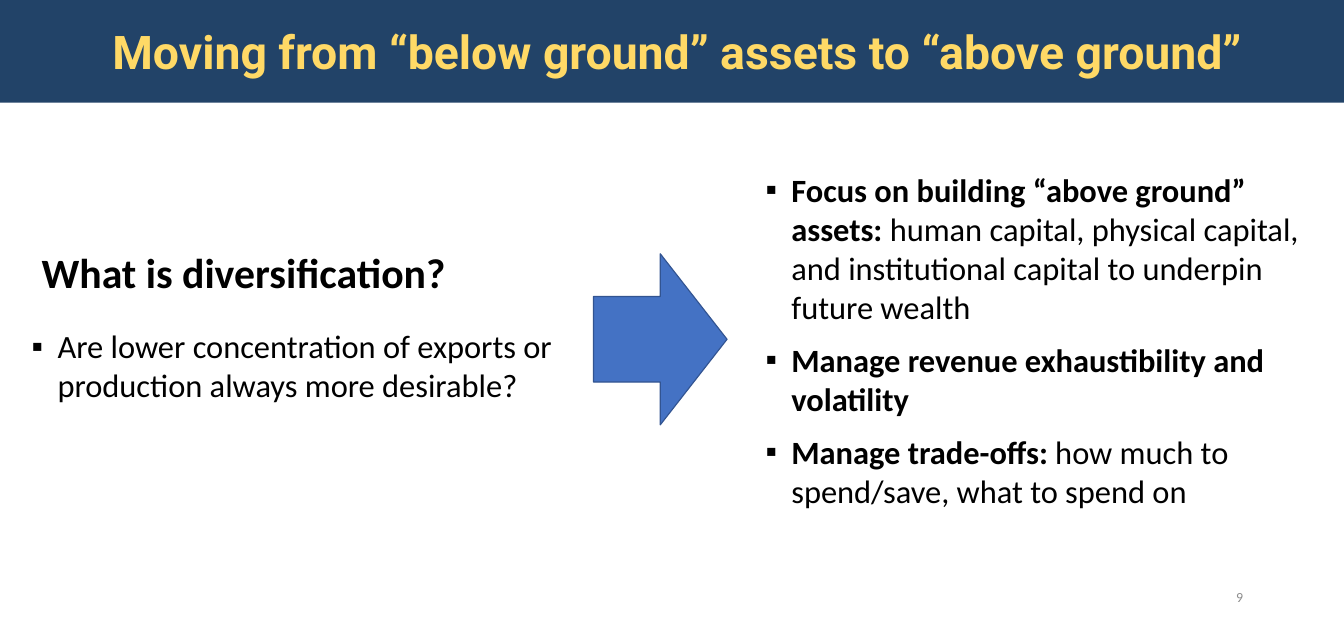
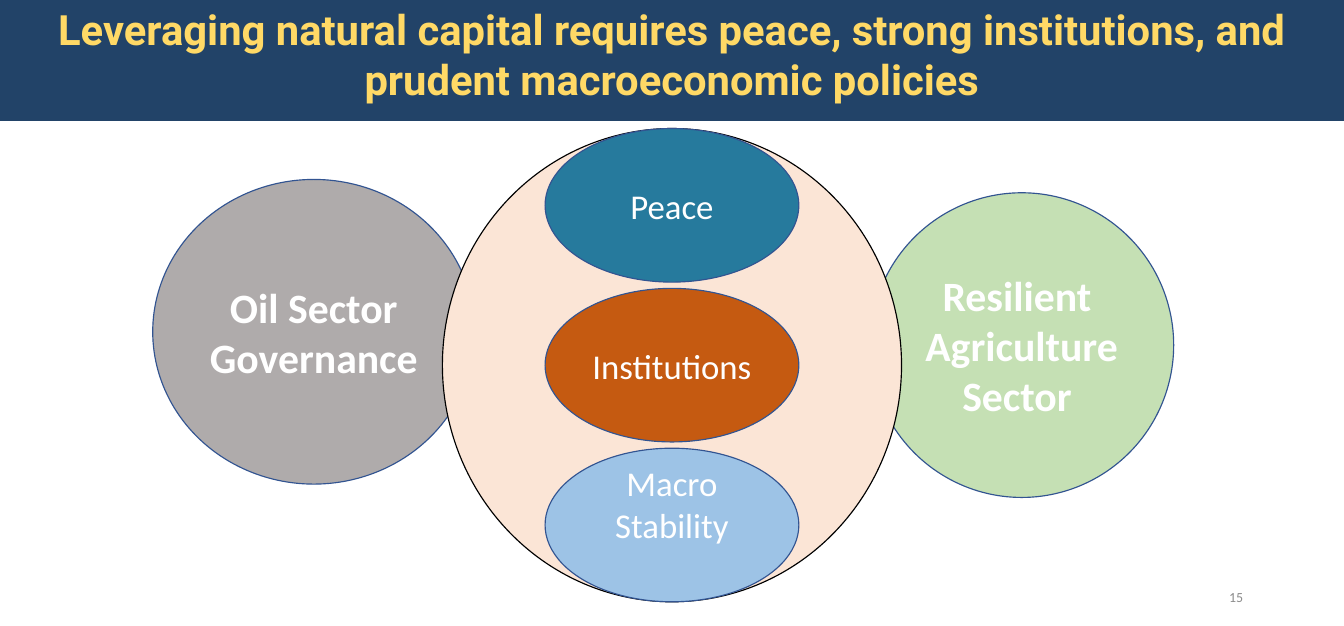
from lxml.etree import SubElement
from pptx import Presentation
from pptx.dml.color import RGBColor
from pptx.enum.shapes import MSO_SHAPE
from pptx.enum.text import MSO_ANCHOR, MSO_AUTO_SIZE, PP_ALIGN
from pptx.oxml.ns import qn
from pptx.util import Inches, Pt

WIDTH, HEIGHT = 16.1, 7.5
NAVY, GOLD, WHITE, BLACK = "224368", "FFD966", "FFFFFF", "000000"
GREY, OUTLINE, ARROW_BLUE = "8C8C8C", "325491", "4472C4"
BODY_FONT, TITLE_FONT = "Calibri", "Roboto"
TWO_CONTENT, TITLE_ONLY = 3, 5


def rgb(value):
    return RGBColor.from_string(value)


def place(shape, left, top, width, height):
    shape.left, shape.top = Inches(left), Inches(top)
    shape.width, shape.height = Inches(width), Inches(height)


def set_fill(shape, color):
    shape.fill.solid()
    shape.fill.fore_color.rgb = rgb(color)


def add_run(p, text, size, color=BLACK, bold=False, font=BODY_FONT):
    r = p.add_run()
    r.text = text
    r.font.name = font
    r.font.size = Pt(size)
    r.font.bold = bold
    r.font.color.rgb = rgb(color)


def setup_frame(shape, anchor=MSO_ANCHOR.TOP):
    tf = shape.text_frame
    tf.word_wrap = True
    tf.auto_size = MSO_AUTO_SIZE.NONE
    tf.vertical_anchor = anchor
    return tf


def next_paragraph(tf, index):
    return tf.add_paragraph() if index else tf.paragraphs[0]


def add_title(s, text, size, band_height, margin_top, margin_left=0.1):
    title = s.shapes.title
    place(title, 0, 0, WIDTH, band_height)
    set_fill(title, NAVY)
    tf = setup_frame(title)
    tf.margin_top = Inches(margin_top)
    tf.margin_left = Inches(margin_left)
    p = tf.paragraphs[0]
    p.alignment = PP_ALIGN.CENTER
    add_run(p, text, size, GOLD, True, TITLE_FONT)


def add_heading(s, text, box):
    heading = s.shapes.add_shape(MSO_SHAPE.RECTANGLE, *map(Inches, box))
    heading.shadow.inherit = False
    set_fill(heading, WHITE)
    heading.line.fill.background()
    p = setup_frame(heading).paragraphs[0]
    p.alignment = PP_ALIGN.LEFT
    add_run(p, text, 36, bold=True)


def add_page_number(s, number):
    label = s.shapes.add_textbox(*map(Inches, (11.37, 6.95, 3.62, 0.4)))
    p = setup_frame(label, MSO_ANCHOR.MIDDLE).paragraphs[0]
    p.alignment = PP_ALIGN.RIGHT
    add_run(p, number, 12, GREY)


def fill_list(body, box, items):
    place(body, *box)
    tf = setup_frame(body)
    for index, (lead, rest) in enumerate(items):
        p = next_paragraph(tf, index)
        pPr = p._p.get_or_add_pPr()
        pPr.set("marL", str(Inches(0.31)))
        pPr.set("indent", str(-Inches(0.31)))
        SubElement(pPr, qn("a:buChar")).set("char", "▪")
        p.space_before = Pt(0)
        p.space_after = Pt(12)
        for text, bold in ((lead, True), (rest, False)):
            if text:
                add_run(p, text, 28, bold=bold)


def add_figure(s, kind, box, fill, line=OUTLINE):
    shape = s.shapes.add_shape(kind, *map(Inches, box))
    shape.shadow.inherit = False
    set_fill(shape, fill)
    shape.line.color.rgb = rgb(line)
    shape.line.width = Pt(1)
    return shape


def add_ellipse(s, box, fill, lines, size, bold=False):
    shape = add_figure(s, MSO_SHAPE.OVAL, box, fill)
    tf = setup_frame(shape, MSO_ANCHOR.MIDDLE)
    for index, text in enumerate(lines):
        p = next_paragraph(tf, index)
        p.alignment = PP_ALIGN.CENTER
        add_run(p, text, size, WHITE, bold)
    return shape


def build_assets_slide(prs):
    s = prs.slides.add_slide(prs.slide_layouts[TWO_CONTENT])
    add_title(s, "Moving from “below ground” assets to “above ground”", 40, 1.23, 0.28, 0.22)
    add_heading(s, "What is diversification?", (0.4, 2.91, 7.65, 0.71))
    fill_list(s.placeholders[1], (0.28, 3.86, 7.15, 2.46), [
        ("", "Are lower concentration of exports or production always more desirable?"),
    ])
    fill_list(s.placeholders[2], (9.07, 1.99, 6.63, 4.21), [
        ("Focus on building “above ground” assets: ",
         "human capital, physical capital, and institutional capital to underpin future wealth"),
        ("Manage revenue exhaustibility and volatility", ""),
        ("Manage trade-offs: ", "how much to spend/save, what to spend on"),
    ])
    add_figure(s, MSO_SHAPE.RIGHT_ARROW, (7.11, 3.04, 1.6, 2.05), ARROW_BLUE)
    add_page_number(s, "9")


def build_capital_slide(prs):
    s = prs.slides.add_slide(prs.slide_layouts[TITLE_ONLY])
    add_title(s, "Leveraging natural capital requires peace, strong institutions, "
              "and prudent macroeconomic policies", 36, 1.45, 0.05)
    add_ellipse(s, (10.42, 2.31, 3.64, 3.65), "C5E0B4",
                ["Resilient ", "Agriculture Sector "], 36, True)
    add_ellipse(s, (1.83, 2.15, 3.86, 3.65), "AFABAB",
                ["Oil Sector Governance"], 36, True)

    top, outer_width, outer_height = 1.54, 5.5, 5.67
    inner_width, inner_height = 3.04, 1.84
    add_figure(s, MSO_SHAPE.OVAL,
               ((WIDTH - outer_width) / 2, top, outer_width, outer_height), "FBE5D6", BLACK)
    pillars = [("Peace", "267A9D"), ("Institutions", "C55A11"), ("Macro Stability", "9DC3E6")]
    pitch = (outer_height - inner_height) / (len(pillars) - 1)
    for index, (text, fill) in enumerate(pillars):
        box = ((WIDTH - inner_width) / 2, top + index * pitch, inner_width, inner_height)
        pillar = add_ellipse(s, box, fill, [text], 30)
    pillar.text_frame.margin_bottom = Inches(0.56)
    add_page_number(s, "15")


def main():
    prs = Presentation()
    prs.slide_width, prs.slide_height = Inches(WIDTH), Inches(HEIGHT)
    build_assets_slide(prs)
    build_capital_slide(prs)
    prs.save("out.pptx")


if __name__ == "__main__":
    main()
